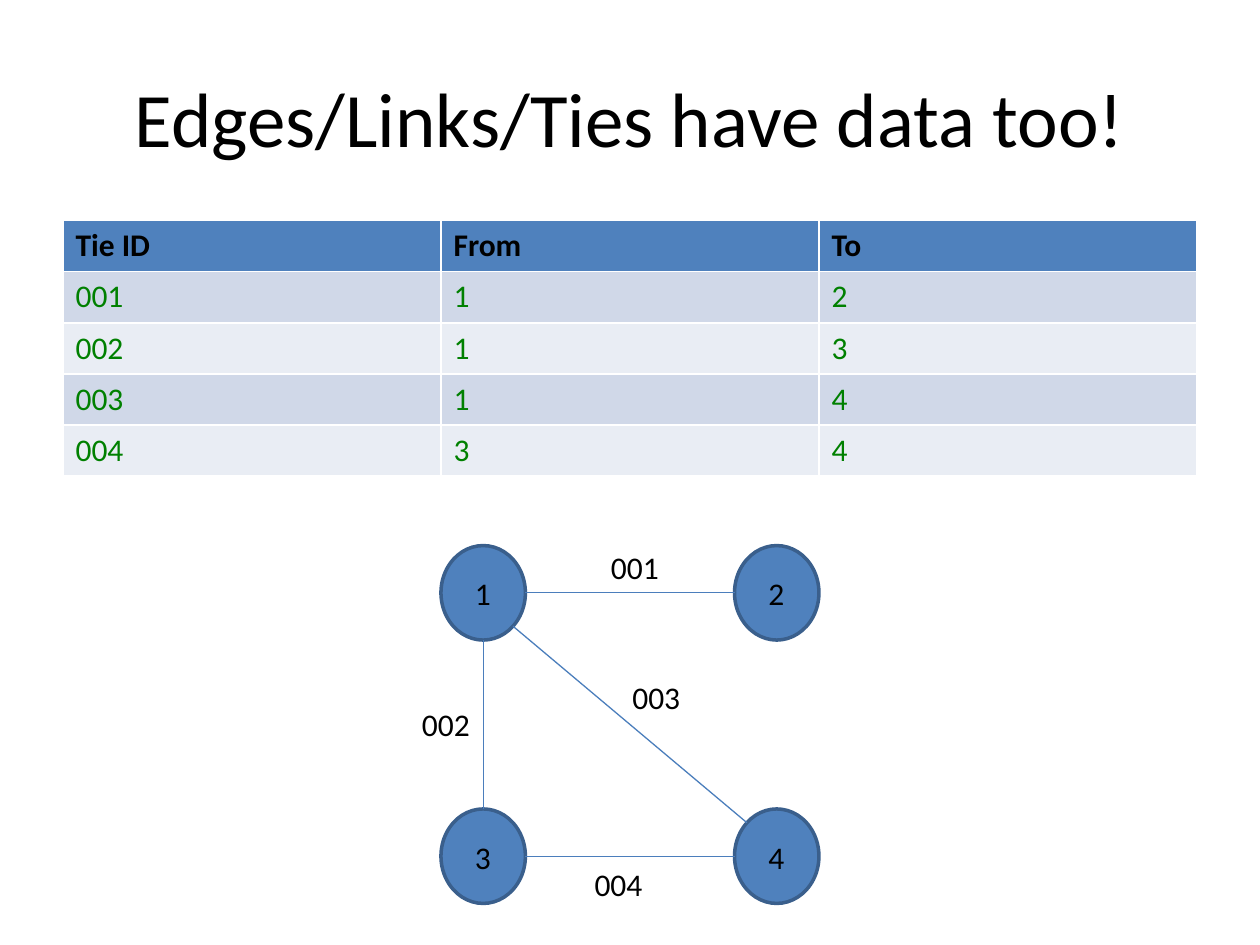
"""Builds a slide that shows a table of ties beside the network they form."""
from math import cos, radians, sin

from pptx import Presentation
from pptx.dml.color import RGBColor
from pptx.enum.shapes import MSO_CONNECTOR as Connector, MSO_SHAPE as Shape
from pptx.enum.text import MSO_ANCHOR as Anchor, PP_ALIGN as Align
from pptx.oxml.ns import qn
from pptx.util import Inches, Pt

BLACK = RGBColor(0x00, 0x00, 0x00)
GREEN = RGBColor(0x00, 0x80, 0x00)
BLUE = RGBColor(0x4F, 0x81, 0xBD)
OUTLINE = RGBColor(0x3A, 0x5F, 0x8C)
EDGE = RGBColor(0x4B, 0x7E, 0xBC)
BANDS = (RGBColor(0xE9, 0xED, 0xF4), RGBColor(0xD0, 0xD8, 0xE8))

FONT = "Calibri"
NODE_WIDTH, NODE_HEIGHT = 0.67, 0.75
LEFT, RIGHT, TOP, BOTTOM = 3.5, 5.83, 4.33, 6.42

HEADINGS = ("Tie ID", "From", "To")
TIES = (("001", "1", "2"), ("002", "1", "3"), ("003", "1", "4"), ("004", "3", "4"))
NODES = {"1": (LEFT, TOP), "2": (RIGHT, TOP), "3": (LEFT, BOTTOM), "4": (RIGHT, BOTTOM)}
EDGE_ANGLES = {"001": 0, "002": 90, "003": 45, "004": 0}
LABEL_PLACES = {"001": (4.75, 4.3), "002": (3.25, 5.55),
                "003": (4.92, 5.33), "004": (4.62, 6.82)}


def add_span(para, text, size=18, color=BLACK, bold=False):
    """Add one formatted run to a paragraph."""
    span = para.add_run()
    span.text = text
    span.font.name = FONT
    span.font.size = Pt(size)
    span.font.bold = bold
    span.font.color.rgb = color


def add_text(page, text, left, top, width, height=0.4, size=18, align=Align.LEFT,
             anchor=Anchor.TOP):
    """Add a wrapping text box that holds one line."""
    box = page.shapes.add_textbox(Inches(left), Inches(top), Inches(width), Inches(height))
    frame = box.text_frame
    frame.word_wrap = True
    frame.vertical_anchor = anchor
    para = frame.paragraphs[0]
    para.alignment = align
    add_span(para, text, size)


def add_tie_table(page):
    """Add the table that lists each tie with its two ends."""
    rows = (HEADINGS, *TIES)
    table = page.shapes.add_table(len(rows), len(HEADINGS), Inches(0.5), Inches(1.75),
                                  Inches(9), Inches(2.03)).table
    for row_number, values in enumerate(rows):
        heading = row_number == 0
        for column, value in enumerate(values):
            cell = table.cell(row_number, column)
            cell.fill.solid()
            cell.fill.fore_color.rgb = BLUE if heading else BANDS[row_number % 2]
            add_span(cell.text_frame.paragraphs[0], value,
                     color=BLACK if heading else GREEN, bold=heading)


def add_node(page, name):
    """Add the ellipse of a node and its number."""
    left, top = NODES[name]
    node = page.shapes.add_shape(Shape.OVAL, Inches(left), Inches(top),
                                 Inches(NODE_WIDTH), Inches(NODE_HEIGHT))
    node.shadow.inherit = False
    node.fill.solid()
    node.fill.fore_color.rgb = BLUE
    node.line.color.rgb = OUTLINE
    node.line.width = Pt(2)
    add_text(page, name, left + 0.17, top + 0.18, 0.33)


def rim_point(name, angle):
    """Return the point on a node's rim, clockwise from its right side."""
    left, top = NODES[name]
    return (Inches(left + NODE_WIDTH / 2 * (1 + cos(radians(angle)))),
            Inches(top + NODE_HEIGHT / 2 * (1 + sin(radians(angle)))))


def add_tie(page, name, start, end):
    """Add the line between two nodes and its label."""
    angle = EDGE_ANGLES[name]
    line = page.shapes.add_connector(Connector.STRAIGHT, *rim_point(start, angle),
                                     *rim_point(end, angle + 180))
    line.line.color.rgb = EDGE
    line.line.width = Pt(0.75)
    properties = line._element.spPr
    properties.append(properties.makeelement(qn("a:effectLst"), {}))
    add_text(page, name, *LABEL_PLACES[name], 0.75)


def main():
    """Build the slide and save it."""
    deck = Presentation()
    deck.slide_width, deck.slide_height = Inches(10), Inches(7.5)
    page = deck.slides.add_slide(deck.slide_layouts[6])
    add_text(page, "Edges/Links/Ties have data too!", 0.5, 0.3, 9, 1.25, 44,
             Align.CENTER, Anchor.MIDDLE)
    add_tie_table(page)
    for name in NODES:
        add_node(page, name)
    for tie in TIES:
        add_tie(page, *tie)
    deck.save("out.pptx")


if __name__ == "__main__":
    main()
